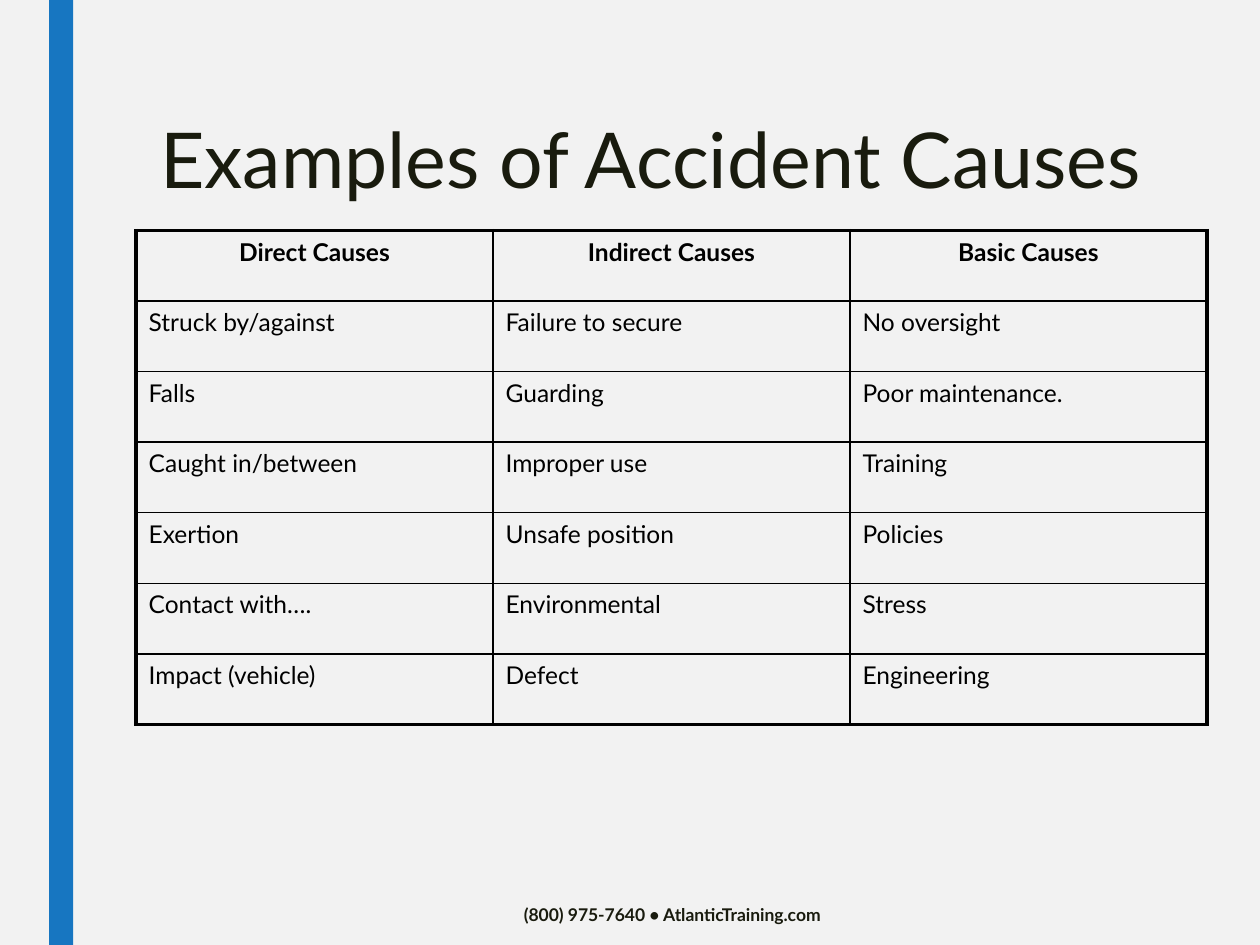
from lxml.etree import SubElement
from pptx import Presentation
from pptx.dml.color import RGBColor
from pptx.enum.shapes import MSO_SHAPE
from pptx.enum.text import MSO_ANCHOR, MSO_AUTO_SIZE, PP_ALIGN
from pptx.oxml.ns import qn
from pptx.util import Inches, Pt

FONT = "Lato"
INK = "191B0E"
BLACK = "000000"
THICK, THIN = 2.25, 1
CAUSES = [
    ("Direct Causes", "Indirect Causes", "Basic Causes"),
    ("Struck by/against", "Failure to secure", "No oversight"),
    ("Falls", "Guarding", "Poor maintenance."),
    ("Caught in/between", "Improper use", "Training"),
    ("Exertion", "Unsafe position", "Policies"),
    ("Contact with….", "Environmental", "Stress"),
    ("Impact (vehicle)", "Defect", "Engineering"),
]


def color(hex_value):
    return RGBColor.from_string(hex_value)


def write(frame, text, size, ink, bold=False, align=PP_ALIGN.LEFT):
    frame.text = text
    paragraph = frame.paragraphs[0]
    paragraph.alignment = align
    font = paragraph.runs[0].font
    font.name, font.size, font.bold = FONT, Pt(size), bold
    font.color.rgb = color(ink)
    return paragraph


def add_stripe(slide, height):
    stripe = slide.shapes.add_shape(
        MSO_SHAPE.RECTANGLE, Inches(0.39), 0, Inches(0.19), height)
    stripe.shadow.inherit = False
    stripe.fill.solid()
    stripe.fill.fore_color.rgb = color("1776C1")
    stripe.line.fill.background()


def set_title(slide, text):
    title = slide.shapes.title
    title.left, title.top = Inches(1.17), Inches(0.92)
    title.width, title.height = Inches(8.5), Inches(1.25)
    title.text_frame.auto_size = MSO_AUTO_SIZE.NONE
    title.text_frame.vertical_anchor = MSO_ANCHOR.TOP
    write(title.text_frame, text, 44, INK).line_spacing = 0.89


def set_border(cell, side, width):
    edge = SubElement(cell._tc.get_or_add_tcPr(), qn(f"a:ln{side}"), w=str(Pt(width)))
    fill = SubElement(edge, qn("a:solidFill"))
    SubElement(fill, qn("a:srgbClr"), val=BLACK)


def add_causes_table(slide):
    rows, columns = len(CAUSES), len(CAUSES[0])
    table = slide.shapes.add_table(
        rows, columns, Inches(1.08), Inches(1.83), Inches(8.5), Inches(3.92)).table
    table.first_row = table.horz_banding = False
    for r, causes in enumerate(CAUSES):
        for c, cause in enumerate(causes):
            cell = table.cell(r, c)
            header = r == 0
            write(cell.text_frame, cause, 14, BLACK, header,
                  PP_ALIGN.CENTER if header else PP_ALIGN.LEFT)
            outer = {"L": c == 0, "R": c == columns - 1,
                     "T": r == 0, "B": r == rows - 1}
            for side, is_outer in outer.items():
                set_border(cell, side, THICK if is_outer else THIN)
            cell.fill.background()


def add_contact(slide, text):
    contact = slide.shapes.add_textbox(
        Inches(3.75), Inches(7.01), Inches(3.17), Inches(0.5)).text_frame
    contact.word_wrap = True
    contact.vertical_anchor = MSO_ANCHOR.MIDDLE
    write(contact, text, 10, INK, True, PP_ALIGN.CENTER)


def main():
    deck = Presentation()
    deck.slide_width, deck.slide_height = Inches(10), Inches(7.5)
    slide = deck.slides.add_slide(deck.slide_layouts.get_by_name("Title Only"))
    slide.background.fill.solid()
    slide.background.fill.fore_color.rgb = color("F2F2F2")
    add_stripe(slide, deck.slide_height)
    set_title(slide, "Examples of Accident Causes")
    add_causes_table(slide)
    add_contact(slide, "(800) 975-7640 • AtlanticTraining.com")
    deck.save("out.pptx")


if __name__ == "__main__":
    main()
